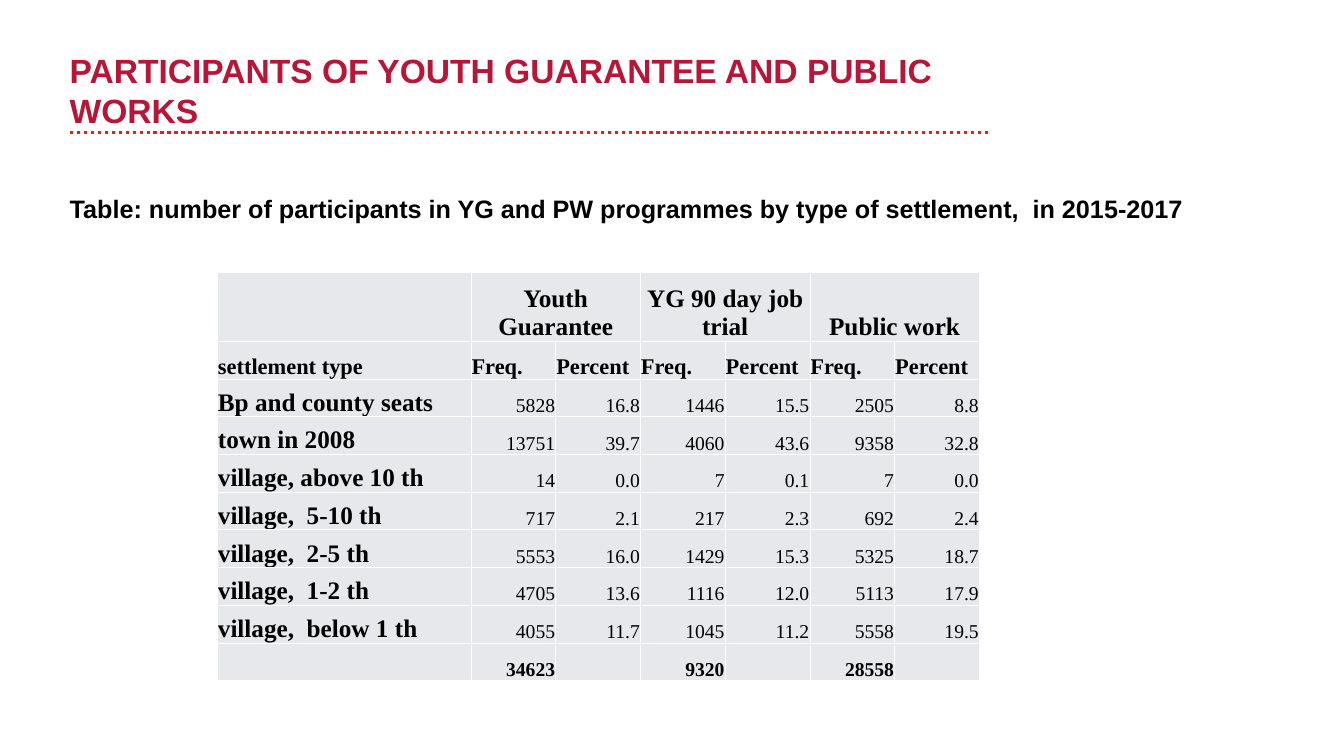
from dataclasses import dataclass

from lxml import etree
from pptx import Presentation
from pptx import slide as sl
from pptx import table as tb
from pptx import text as tx
from pptx.dml import color
from pptx.enum import dml, shapes, text
from pptx.oxml import ns
from pptx.util import Cm, Pt

RED, LINE_RED, BLACK, WHITE, GREY = "B81639", "D8222C", "000000", "FFFFFF", "E7E8EB"
SERIF, SANS = "Times New Roman", "Arial"
LEFT, CENTER, RIGHT = text.PP_ALIGN.LEFT, text.PP_ALIGN.CENTER, text.PP_ALIGN.RIGHT

MARGIN = 3.51
LABEL_WIDTH, VALUE_WIDTH = 12.78, 4.27
HEADER_HEIGHT, ROW_HEIGHT = 3.5, 1.9


@dataclass(frozen=True)
class Style:
    size: int
    bold: bool = True
    align: text.PP_ALIGN = LEFT
    font: str = SERIF
    color: str = BLACK


@dataclass(frozen=True)
class Box:
    left: float
    top: float
    width: float
    height: float
    text: str
    style: Style


GROUP = Style(36, align=CENTER)
COLUMN = Style(32)
LABEL = Style(36)
VALUE = Style(28, bold=False, align=RIGHT)
TOTAL = Style(28, align=RIGHT)

BOXES = [
    Box(MARGIN, 2.49, 48.41, 4.11, "PARTICIPANTS OF YOUTH GUARANTEE AND PUBLIC WORKS",
        Style(48, font=SANS, color=RED)),
    Box(MARGIN, 9.65, 62.64, 1.7,
        "Table: number of participants in YG and PW programmes by type of settlement,  in 2015-2017",
        Style(36, font=SANS)),
]
GROUPS = ["Youth Guarantee", "YG 90 day job trial", "Public work"]
SETTLEMENTS = [
    ("Bp and county seats", "5828", "16.8", "1446", "15.5", "2505", "8.8"),
    ("town in 2008", "13751", "39.7", "4060", "43.6", "9358", "32.8"),
    ("village, above 10 th", "14", "0.0", "7", "0.1", "7", "0.0"),
    ("village,  5-10 th", "717", "2.1", "217", "2.3", "692", "2.4"),
    ("village,  2-5 th", "5553", "16.0", "1429", "15.3", "5325", "18.7"),
    ("village,  1-2 th", "4705", "13.6", "1116", "12.0", "5113", "17.9"),
    ("village,  below 1 th", "4055", "11.7", "1045", "11.2", "5558", "19.5"),
]
TOTALS = ["34623", "9320", "28558"]


def rgb(value: str) -> color.RGBColor:
    return color.RGBColor.from_string(value)


def write(tf: tx.text.TextFrame, content: str, style: Style) -> None:
    p = tf.paragraphs[0]
    p.text = content
    p.alignment = style.align
    p.font.name = style.font
    p.font.size = Pt(style.size)
    p.font.bold = style.bold
    p.font.color.rgb = rgb(style.color)


def add_box(s: sl.Slide, box: Box) -> None:
    sp = s.shapes.add_textbox(Cm(box.left), Cm(box.top), Cm(box.width), Cm(box.height))
    tf = sp.text_frame
    tf.word_wrap = True
    tf.vertical_anchor = text.MSO_ANCHOR.MIDDLE
    tf.margin_left = tf.margin_right = tf.margin_top = tf.margin_bottom = 0
    write(tf, box.text, box.style)


def add_dotted_rule(s: sl.Slide, left: float, right: float, y: float) -> None:
    rule = s.shapes.add_connector(
        shapes.MSO_CONNECTOR.STRAIGHT, Cm(left), Cm(y), Cm(right), Cm(y))
    rule.line.color.rgb = rgb(LINE_RED)
    rule.line.width = Pt(5)
    rule.line.dash_style = dml.MSO_LINE.ROUND_DOT
    etree.SubElement(rule._element.spPr, ns.qn("a:effectLst"))


def set_borders(cell: tb._Cell) -> None:
    tc_pr = cell._tc.get_or_add_tcPr()
    for side in ("lnL", "lnR", "lnT", "lnB"):
        ln = etree.SubElement(tc_pr, ns.qn(f"a:{side}"), w=str(Pt(1)))
        fill = etree.SubElement(ln, ns.qn("a:solidFill"))
        etree.SubElement(fill, ns.qn("a:srgbClr"), val=WHITE)


def fill_cell(cell: tb._Cell, content: str, style: Style) -> None:
    set_borders(cell)
    cell.fill.solid()
    cell.fill.fore_color.rgb = rgb(GREY)
    cell.vertical_anchor = text.MSO_ANCHOR.BOTTOM
    cell.margin_left = cell.margin_right = cell.margin_top = Cm(0.03)
    cell.margin_bottom = 0
    if content:
        write(cell.text_frame, content, style)


def paired(values: list[str]) -> list[str]:
    """Put each value over a Freq. column and leave its Percent column empty."""
    return [cell for value in values for cell in (value, "")]


def add_participants_table(s: sl.Slide, left: float, top: float) -> None:
    rows = [
        (["", *paired(GROUPS)], GROUP, GROUP),
        (["settlement type", *["Freq.", "Percent"] * len(GROUPS)], COLUMN, COLUMN),
        *((row, LABEL, VALUE) for row in SETTLEMENTS),
        (["", *paired(TOTALS)], LABEL, TOTAL),
    ]
    widths = [LABEL_WIDTH] + [VALUE_WIDTH] * 2 * len(GROUPS)
    heights = [HEADER_HEIGHT] + [ROW_HEIGHT] * (len(rows) - 1)
    table = s.shapes.add_table(len(rows), len(widths), Cm(left), Cm(top),
                               Cm(sum(widths)), Cm(sum(heights))).table
    table.first_row = table.horz_banding = False
    for column, width in zip(table.columns, widths):
        column.width = Cm(width)
    for row, height in zip(table.rows, heights):
        row.height = Cm(height)
    for r, (contents, first, rest) in enumerate(rows):
        for c, content in enumerate(contents):
            fill_cell(table.cell(r, c), content, rest if c else first)
    for c in range(1, len(widths), 2):
        table.cell(0, c).merge(table.cell(0, c + 1))


def main() -> None:
    prs = Presentation()
    prs.slide_width, prs.slide_height = Cm(67.72), Cm(38.1)
    s = prs.slides.add_slide(prs.slide_layouts[6])
    add_dotted_rule(s, MARGIN, 49.83, 6.68)
    for box in BOXES:
        add_box(s, box)
    add_participants_table(s, 10.95, 13.7)
    prs.save("out.pptx")


if __name__ == "__main__":
    main()
